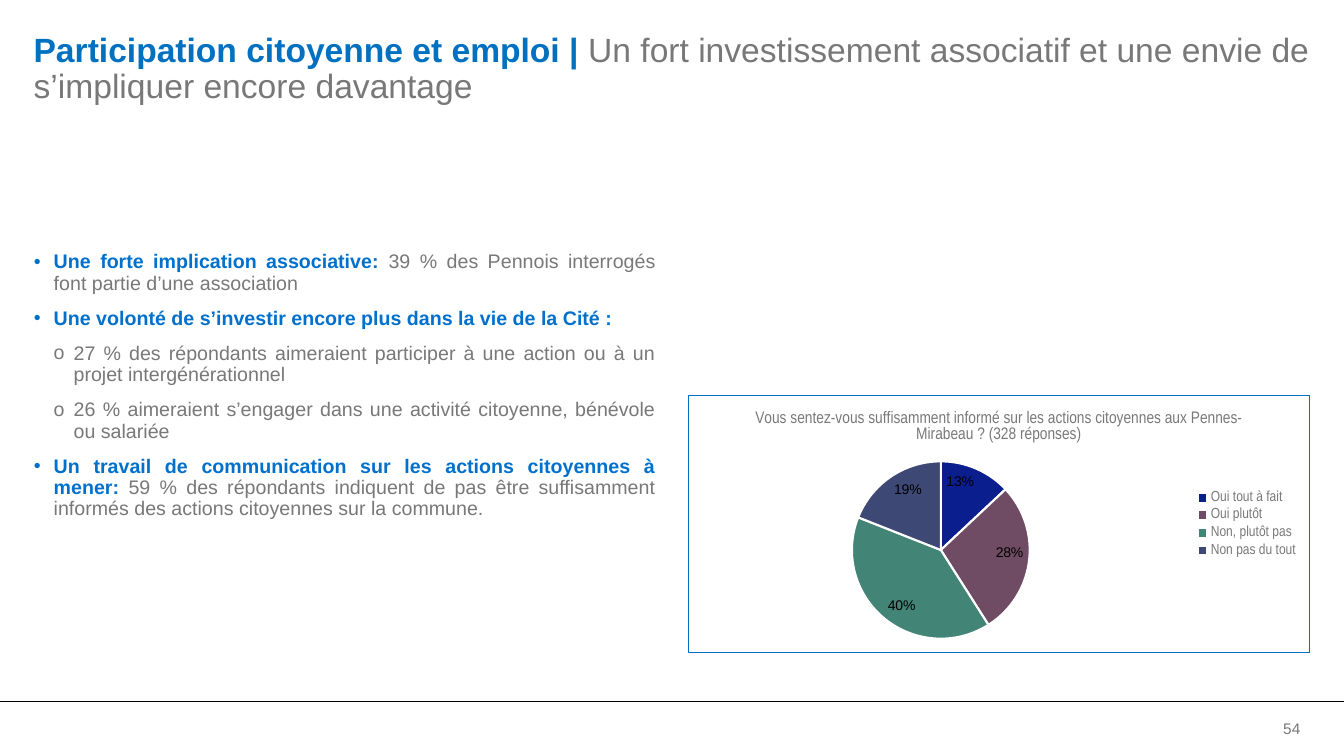
"""Build the slide on citizen participation and employment."""
import lxml.etree
import pptx
import pptx.chart.data
import pptx.dml.color
import pptx.enum.chart
import pptx.enum.shapes
import pptx.enum.text
import pptx.oxml
import pptx.oxml.ns
import pptx.util

Pt = pptx.util.Pt
RGBColor = pptx.dml.color.RGBColor
qn = pptx.oxml.ns.qn
Align = pptx.enum.text.PP_ALIGN
Anchor = pptx.enum.text.MSO_ANCHOR

BLACK = RGBColor(0x00, 0x00, 0x00)
WHITE = RGBColor(0xFF, 0xFF, 0xFF)
GREY = RGBColor(0x77, 0x78, 0x77)
TITLE_BLUE = RGBColor(0x00, 0x70, 0xC0)
KEY_BLUE = RGBColor(0x00, 0x70, 0xCD)
NAVY = RGBColor(0x0A, 0x1E, 0x8E)
PLUM = RGBColor(0x6F, 0x4C, 0x63)
GREEN = RGBColor(0x42, 0x84, 0x75)
SLATE = RGBColor(0x3E, 0x48, 0x75)

FINDINGS = [
    (0, "Une forte implication associative: ",
     "39 % des Pennois interrogés font partie d’une association"),
    (0, "Une volonté de s’investir encore plus dans la vie de la Cité :", ""),
    (1, "", "27 % des répondants aimeraient participer à une action ou à un projet intergénérationnel"),
    (1, "", "26 % aimeraient s’engager dans une activité citoyenne, bénévole ou salariée"),
    (0, "Un travail de communication sur les actions citoyennes à mener: ",
     "59 % des répondants indiquent de pas être suffisamment informés "
     "des actions citoyennes sur la commune."),
]
ANSWERS = [
    ("Oui tout à fait", 13, NAVY),
    ("Oui plutôt", 28, PLUM),
    ("Non, plutôt pas", 40, GREEN),
    ("Non pas du tout", 19, SLATE),
]
QUESTION = ("Vous sentez-vous suffisamment informé sur les actions citoyennes "
            "aux Pennes-Mirabeau ? (328 réponses)")


class SlideBuilder:
    """Hold the text style and the current slide."""

    font_name = "Arial"
    narrow_name = "Arial Narrow"
    line_spacing = 0.9
    bullet_step = 14.2

    def __init__(self, slide):
        self.slide = slide

    def style(self, font, size, color, bold=False, name=font_name):
        font.name = name
        font.size = Pt(size)
        font.bold = bold
        font.color.rgb = color

    def run(self, paragraph, text, size, color, bold=False):
        run = paragraph.add_run()
        run.text = text
        self.style(run.font, size, color, bold)

    def frame(self, shape, box, insets, anchor=Anchor.TOP):
        shape.left, shape.top, shape.width, shape.height = map(Pt, box)
        frame = shape.text_frame
        frame.word_wrap = True
        frame.auto_size = pptx.enum.text.MSO_AUTO_SIZE.NONE
        frame.vertical_anchor = anchor
        (frame.margin_left, frame.margin_top,
         frame.margin_right, frame.margin_bottom) = map(Pt, insets)
        return frame

    def text_box(self, box, insets, anchor=Anchor.TOP):
        return self.frame(self.slide.shapes.add_textbox(0, 0, 0, 0), box, insets, anchor)

    def title(self, box, theme, message):
        frame = self.frame(self.slide.shapes.title, box, (0, 0, 0, 3.6))
        heading = frame.paragraphs[0]
        heading.alignment = Align.LEFT
        heading.line_spacing = self.line_spacing
        self.run(heading, theme, 24, TITLE_BLUE, True)
        self.run(heading, message, 24, GREY)

    def bullet(self, paragraph, level):
        properties = paragraph._p.get_or_add_pPr()
        properties.set("marL", str(Pt(self.bullet_step * (level + 1))))
        properties.set("indent", str(-Pt(self.bullet_step)))
        color = lxml.etree.SubElement(properties, qn("a:buClr"))
        lxml.etree.SubElement(color, qn("a:srgbClr"), val=str((KEY_BLUE, GREY)[level]))
        lxml.etree.SubElement(properties, qn("a:buFont"), typeface=self.font_name)
        lxml.etree.SubElement(properties, qn("a:buChar"), char="•o"[level])

    def bullets(self, box, findings):
        frame = self.text_box(box, (0, 5.76, 0, 5.76))
        for index, (level, key, detail) in enumerate(findings):
            finding = frame.add_paragraph() if index else frame.paragraphs[0]
            self.bullet(finding, level)
            finding.alignment = Align.JUSTIFY
            finding.line_spacing = self.line_spacing
            finding.space_before = Pt(10 if index else 0)
            if key:
                self.run(finding, key, 14, KEY_BLUE, True)
            if detail:
                self.run(finding, detail, 14, GREY)

    def rule(self, left, right, top):
        rule = self.slide.shapes.add_connector(
            pptx.enum.shapes.MSO_CONNECTOR.STRAIGHT, Pt(left), Pt(top), Pt(right), Pt(top))
        rule.line.color.rgb = BLACK
        rule.line.width = Pt(0.75)
        lxml.etree.SubElement(rule._element.spPr, qn("a:effectLst"))

    def page_number(self, box, number):
        frame = self.text_box(box, (7.2, 3.6, 7.2, 3.6), Anchor.MIDDLE)
        frame.paragraphs[0].alignment = Align.RIGHT
        self.run(frame.paragraphs[0], number, 11, GREY)

    def chart_border(self, chart):
        border = pptx.oxml.parse_xml(
            '<c:spPr xmlns:c="http://schemas.openxmlformats.org/drawingml/2006/chart"'
            ' xmlns:a="http://schemas.openxmlformats.org/drawingml/2006/main">'
            f'<a:solidFill><a:srgbClr val="{WHITE}"/></a:solidFill>'
            f'<a:ln w="{Pt(0.75)}"><a:solidFill><a:srgbClr val="{TITLE_BLUE}"/></a:solidFill></a:ln>'
            '</c:spPr>')
        chart._chartSpace.find(qn("c:chart")).addnext(border)

    def pie(self, box, question, answers):
        poll = pptx.chart.data.CategoryChartData()
        poll.categories = [answer for answer, _, _ in answers]
        poll.add_series("Series 1", [share for _, share, _ in answers])
        chart = self.slide.shapes.add_chart(
            pptx.enum.chart.XL_CHART_TYPE.PIE, *map(Pt, box), poll).chart
        self.style(chart.font, 10, BLACK)
        self.chart_border(chart)

        heading = chart.chart_title.text_frame.paragraphs[0]
        chart.chart_title.include_in_layout = False
        run = heading.add_run()
        run.text = question
        self.style(run.font, 12, GREY, name=self.narrow_name)

        chart.has_legend = True
        chart.legend.position = pptx.enum.chart.XL_LEGEND_POSITION.RIGHT
        chart.legend.include_in_layout = False
        self.style(chart.legend.font, 10.5, GREY, name=self.narrow_name)

        plot = chart.plots[0]
        plot.vary_by_categories = True
        for index, (_, _, color) in enumerate(answers):
            slice_format = plot.series[0].points[index].format
            slice_format.fill.solid()
            slice_format.fill.fore_color.rgb = color
            slice_format.line.color.rgb = WHITE
            slice_format.line.width = Pt(1.5)

        labels = plot.series[0].data_labels
        labels.show_value = False
        labels.show_percentage = True
        labels.number_format = "0%"
        labels.number_format_is_linked = False
        labels.position = pptx.enum.chart.XL_LABEL_POSITION.INSIDE_END
        self.style(labels.font, 10, BLACK)


def main():
    deck = pptx.Presentation()
    deck.slide_width, deck.slide_height = Pt(960), Pt(540)
    builder = SlideBuilder(deck.slides.add_slide(deck.slide_layouts[5]))
    builder.rule(0, 960, 501)
    builder.page_number((883.5, 501, 52.5, 38), "54")
    builder.title((24, 24, 911.5, 28), "Participation citoyenne et emploi |",
                  " Un fort investissement associatif et une envie de s’impliquer encore davantage")
    builder.bullets((24.2, 174.2, 444.2, 204.5), FINDINGS)
    builder.pie((491.3, 282.2, 444.2, 184.3), QUESTION, ANSWERS)
    deck.save("out.pptx")


if __name__ == "__main__":
    main()
